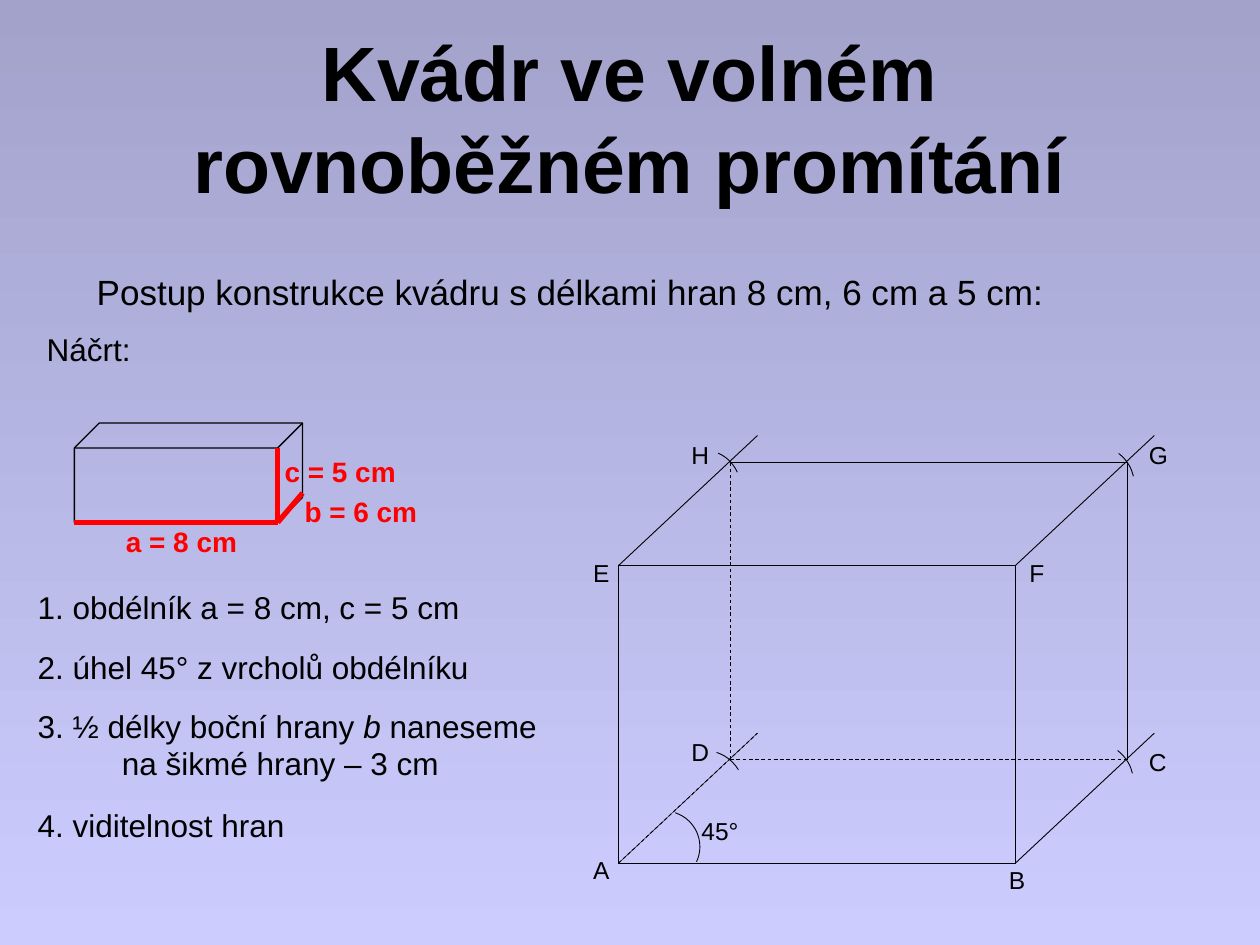
from dataclasses import dataclass

from lxml import etree
from pptx import Presentation
from pptx import util as u
from pptx.dml.color import RGBColor
from pptx.enum import dml, shapes, text
from pptx.oxml.ns import qn

BLACK, RED = "000000", "FF0000"
EDGE = 0.5  # line width in points

Point = tuple[float, float]


@dataclass
class Note:
    """A text box, in centimetres, with (words, italic) runs."""
    runs: list[tuple[str, bool]]
    left: float
    top: float
    width: float
    height: float
    size: float
    color: str = BLACK
    bold: bool = False
    hanging: float = 0
    line_spacing: float = 1.0
    centered: bool = False


@dataclass
class Segment:
    start: Point
    end: Point
    weight: float = EDGE
    color: str = BLACK
    dashed: bool = False


@dataclass
class Arc:
    """A circular arc; angles run clockwise from the right, in degrees."""
    center: Point
    radius: float
    start: float
    end: float


def rgb(value: str) -> RGBColor:
    return RGBColor.from_string(value)


def shifted(point: Point, dx: float, dy: float) -> Point:
    return point[0] + dx, point[1] + dy


def add_note(slide, note: Note) -> None:
    box = slide.shapes.add_textbox(
        *map(u.Cm, (note.left, note.top, note.width, note.height)))
    frame = box.text_frame
    frame.word_wrap = True
    paragraph = frame.paragraphs[0]
    paragraph.line_spacing = note.line_spacing
    if note.centered:
        frame.vertical_anchor = text.MSO_ANCHOR.MIDDLE
        paragraph.alignment = text.PP_ALIGN.CENTER
    else:
        paragraph.space_before = u.Pt(1.2)
    if note.hanging:
        properties = paragraph._p.get_or_add_pPr()
        properties.set("marL", str(u.Cm(note.hanging)))
        properties.set("indent", str(-u.Cm(note.hanging)))
    for words, italic in note.runs:
        run = paragraph.add_run()
        run.text = words
        run.font.name = "Arial"
        run.font.size = u.Pt(note.size)
        run.font.bold = note.bold
        run.font.italic = italic
        run.font.color.rgb = rgb(note.color)


def add_segment(slide, segment: Segment) -> None:
    line = slide.shapes.add_connector(
        shapes.MSO_CONNECTOR.STRAIGHT,
        *map(u.Cm, (*segment.start, *segment.end)))
    line.line.color.rgb = rgb(segment.color)
    line.line.width = u.Pt(segment.weight)
    if segment.dashed:
        line.line.dash_style = dml.MSO_LINE.DASH
    etree.SubElement(line._element.spPr, qn("a:effectLst"))


def add_outline(slide, kind, left: float, top: float, width: float,
                height: float, weight: float = EDGE):
    shape = slide.shapes.add_shape(kind, *map(u.Cm, (left, top, width, height)))
    shape.shadow.inherit = False
    shape.fill.background()
    shape.line.color.rgb = rgb(BLACK)
    shape.line.width = u.Pt(weight)
    return shape


def add_arc(slide, arc: Arc) -> None:
    left, top = shifted(arc.center, -arc.radius, -arc.radius)
    shape = add_outline(slide, shapes.MSO_SHAPE.ARC, left, top,
                        2 * arc.radius, 2 * arc.radius)
    # Angles are stored in 1/60000 degree, adjustments in 1/100000
    shape.adjustments[0] = arc.start % 360 * 0.6
    shape.adjustments[1] = arc.end % 360 * 0.6


def paint_background(slide) -> None:
    fill = slide.background.fill
    fill.gradient()
    fill.gradient_angle = 270
    for stop, color in zip(fill.gradient_stops, ("A2A2CB", "CCCCFF")):
        stop.color.rgb = rgb(color)


def add_texts(slide) -> None:
    add_note(slide, Note([("Kvádr ve volném rovnoběžném promítání", False)],
                         1.27, 0.76, 22.86, 3.18, 44, bold=True, centered=True))
    add_note(slide, Note(
        [("Postup konstrukce kvádru s délkami hran 8 cm, 6 cm a 5 cm:", False)],
        1.7, 5.33, 20.8, 1.4, 20, hanging=1.7))
    add_note(slide, Note([("Náčrt:", False)], 0.69, 6.53, 3.2, 0.99, 18))
    steps = [
        (11.73, [("1. obdélník a = 8 cm, c = 5 cm", False)]),
        (12.93, [("2. úhel 45° z vrcholů obdélníku", False)]),
        (14.12, [("3. ½ délky boční hrany ", False), ("b", True),
                 (" naneseme na šikmé hrany – 3 cm", False)]),
        (16.13, [("4. viditelnost hran", False)]),
    ]
    for top, runs in steps:
        add_note(slide, Note(runs, 0.51, top, 11, 1.2, 18, hanging=1.7))


def add_sketch(slide) -> None:
    """Small cuboid with its three given edges in red."""
    left, top, width, height = 1.5, 8.53, 4.6, 2.0
    depth = height / 4
    cuboid = add_outline(slide, shapes.MSO_SHAPE.CUBE,
                         left, top, width, height, 0.75)
    cuboid.adjustments[0] = 0.25
    corner = (left + width - depth, top + height)
    for end in ((left, top + height), (corner[0], top + depth),
                shifted(corner, depth, -0.59)):
        add_segment(slide, Segment(corner, end, 3, RED))
    for words, x, y in (("a = 8 cm", 2.29, 10.52), ("c = 5 cm", 5.49, 9.12),
                        ("b = 6 cm", 5.89, 9.93)):
        add_note(slide, Note([(words, False)], x, y, 3, 0.81, 16, RED,
                             bold=True, line_spacing=0.9))


def add_construction(slide) -> None:
    """Cuboid ABCDEFGH with the slanted rays and compass marks."""
    width, height = 8.0, 6.0
    ray, depth = (2.8, -2.62), (2.25, -2.08)
    a = (12.47, 17.4)
    b, e = shifted(a, width, 0), shifted(a, 0, -height)
    f = shifted(b, 0, -height)
    d, c, h, g = (shifted(front, *depth) for front in (a, b, e, f))

    add_outline(slide, shapes.MSO_SHAPE.RECTANGLE, *e, width, height)
    add_segment(slide, Segment(a, shifted(a, *ray), dashed=True))
    for front, weight in ((a, 0.25), (b, EDGE), (e, EDGE), (f, EDGE)):
        add_segment(slide, Segment(front, shifted(front, *ray), weight))
    for start, end, dashed in ((h, d, True), (d, c, True),
                               (g, c, False), (h, g, False)):
        add_segment(slide, Segment(start, end, dashed=dashed))

    for arc in (Arc(shifted(a, 0.92, -0.33), 0.72, -72, 25),
                Arc(shifted(d, -0.52, 0.61), 0.8, -72, -31),
                Arc(shifted(h, -0.55, 0.51), 0.76, -66, -24),
                Arc(shifted(c, -0.67, 0.45), 0.8, -53, -13),
                Arc(shifted(g, -0.65, 0.46), 0.8, -53, -13)):
        add_arc(slide, arc)

    for letter, x, y in (("A", 11.71, 17.12), ("B", 20.09, 17.32),
                         ("C", 22.91, 14.94), ("D", 13.69, 14.73),
                         ("E", 11.71, 11.13), ("F", 20.5, 11.13),
                         ("G", 22.91, 8.74), ("H", 13.69, 8.74)):
        add_note(slide, Note([(letter, False)], x, y, 0.79, 0.79, 14))
    add_note(slide, Note([("45°", False)], 13.89, 16.33, 1.4, 0.79, 14))


def main() -> None:
    deck = Presentation()
    deck.slide_width, deck.slide_height = u.Cm(25.4), u.Cm(19.05)
    slide = deck.slides.add_slide(deck.slide_layouts[6])
    paint_background(slide)
    add_texts(slide)
    add_sketch(slide)
    add_construction(slide)
    deck.save("out.pptx")


if __name__ == "__main__":
    main()
